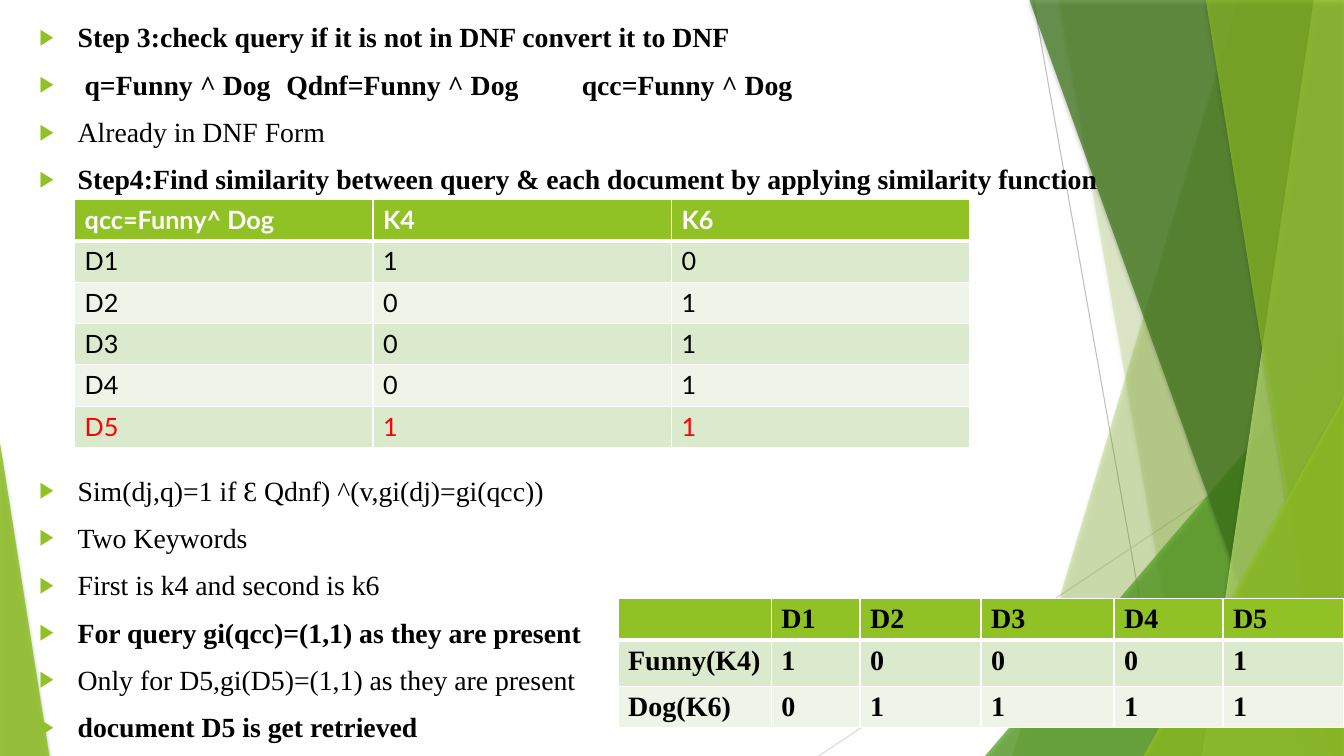
import dataclasses
import typing

import lxml.etree
import pptx
import pptx.dml.color
import pptx.enum.shapes
import pptx.enum.text
import pptx.oxml.ns
import pptx.util

RGB = pptx.dml.color.RGBColor
Pt = pptx.util.Pt
qn = pptx.oxml.ns.qn

EMU_PER_PX = 9144  # 100 px to the inch
SLIDE_W, SLIDE_H = 1333, 750

LIME = RGB(0x90, 0xC2, 0x26)
GREEN = RGB(0x54, 0xA0, 0x21)
DARK_GREEN = RGB(0x3F, 0x78, 0x19)
PALE_LIME = RGB(0xC0, 0xE4, 0x74)
BAND_DARK = RGB(0xDB, 0xE9, 0xCC)
BAND_LIGHT = RGB(0xEE, 0xF4, 0xE7)
GREY = RGB(0xBF, 0xBF, 0xBF)
LIGHT_GREY = RGB(0xD9, 0xD9, 0xD9)
BLACK = RGB(0, 0, 0)
WHITE = RGB(0xFF, 0xFF, 0xFF)
RED = RGB(0xFF, 0, 0)

SERIF = "Times New Roman"
SANS = "Lato"


@dataclasses.dataclass
class Ray:
    start: tuple[int, int]
    end: tuple[int, int]
    color: RGB


@dataclasses.dataclass
class Facet:
    points: list[tuple[int, int]]
    color: RGB
    opacity: int


@dataclasses.dataclass
class Corner:
    box: tuple[int, int, int, int]
    apex: float
    color: RGB
    opacity: int


@dataclasses.dataclass
class Bullet:
    text: str
    bold: bool = False
    before: float = 10
    tabs: tuple[int, ...] = ()


@dataclasses.dataclass
class Grid:
    left: int
    top: int
    cols: list[int]
    rows: list[int]
    cells: list[list[str]]
    font: str
    size: int
    header_color: RGB
    bold_body: bool = False
    marked_row: typing.Optional[int] = None


def right_facet(top_x: int, bottom_x: int, color: RGB, opacity: int) -> Facet:
    """Facet reaching from a slanted left side to the slide's right edge."""
    points = [(top_x, 0), (SLIDE_W, 0), (SLIDE_W, SLIDE_H), (bottom_x, SLIDE_H)]
    return Facet(points, color, opacity)


DECOR = [
    Ray((1025, 0), (1158, 750), GREY),
    Ray((1333, 403), (812, 750), LIGHT_GREY),
    right_facet(1228, 1004, LIME, 30),
    right_facet(1050, 1182, LIME, 20),
    Corner((977, 333, 356, 417), 1, GREEN, 72),
    right_facet(1021, 1291, DARK_GREEN, 70),
    right_facet(1303, 1192, PALE_LIME, 70),
    right_facet(1196, 1317, LIME, 65),
    Corner((1134, 393, 199, 357), 1, LIME, 80),
    Corner((0, 439, 49, 311), 0, LIME, 85),
]

BULLETS = [
    Bullet("Step 3:check query if it is not in DNF convert it to DNF", True, 0),
    Bullet(" q=Funny ^ Dog\tQdnf=Funny ^ Dog\tqcc=Funny ^ Dog", True, tabs=(245, 538)),
    Bullet("Already in DNF Form"),
    Bullet("Step4:Find similarity between query & each document by applying "
           "similarity function", True),
    Bullet("Sim(dj,q)=1 if Ɛ Qdnf) ^(v,gi(dj)=gi(qcc))", before=198.4),
    Bullet("Two Keywords"),
    Bullet("First is k4 and second is k6"),
    Bullet("For query gi(qcc)=(1,1) as they are present", True),
    Bullet("Only for D5,gi(D5)=(1,1) as they are present"),
    Bullet("document D5 is get retrieved", True),
]

GRIDS = [
    Grid(74, 198, [296] * 3, [41] * 6,
         [["qcc=Funny^ Dog", "K4", "K6"], ["D1", "1", "0"], ["D2", "0", "1"],
          ["D3", "0", "1"], ["D4", "0", "1"], ["D5", "1", "1"]],
         SANS, 18, WHITE, marked_row=5),
    Grid(613, 594, [152, 88, 120, 132, 108, 120], [41, 46, 41],
         [["", "D1", "D2", "D3", "D4", "D5"],
          ["Funny(K4)", "1", "0", "0", "0", "1"],
          ["Dog(K6)", "0", "1", "1", "1", "1"]],
         SERIF, 20, BLACK, bold_body=True),
]


def px(n: int) -> pptx.util.Emu:
    return pptx.util.Emu(n * EMU_PER_PX)


def add_xml(parent, tag: str, **attrs):
    return lxml.etree.SubElement(parent, qn(tag), {k: str(v) for k, v in attrs.items()})


def draw_ray(s, ray: Ray) -> None:
    line = s.shapes.add_connector(pptx.enum.shapes.MSO_CONNECTOR.STRAIGHT,
                                  *map(px, ray.start + ray.end))
    line.line.color.rgb = ray.color
    line.line.width = Pt(0.75)
    add_xml(line.element.spPr, "a:effectLst")


def draw_glass(s, item: typing.Union[Facet, Corner]) -> None:
    """Draw a translucent facet or corner triangle with a soft shadow."""
    if isinstance(item, Facet):
        builder = s.shapes.build_freeform(*item.points[0], scale=float(EMU_PER_PX))
        builder.add_line_segments(item.points[1:], close=True)
        sp = builder.convert_to_shape()
    else:
        sp = s.shapes.add_shape(pptx.enum.shapes.MSO_SHAPE.ISOSCELES_TRIANGLE,
                                *map(px, item.box))
        sp.adjustments[0] = item.apex
    sp.fill.solid()
    sp.fill.fore_color.rgb = item.color
    sp.line.fill.background()
    sp.shadow.inherit = False
    props = sp.element.spPr
    color = props.find(qn("a:solidFill")).find(qn("a:srgbClr"))
    add_xml(color, "a:alpha", val=item.opacity * 1000)
    shadow = add_xml(props.find(qn("a:effectLst")), "a:outerShdw", blurRad=Pt(3),
                     dist=Pt(2), dir=5400000, rotWithShape=0)
    add_xml(add_xml(shadow, "a:srgbClr", val=BLACK), "a:alpha", val=35000)


def write_bullet(p, bullet: Bullet) -> None:
    props = p._p.get_or_add_pPr()
    props.set("marL", str(px(38)))
    props.set("indent", str(-px(38)))
    add_xml(add_xml(props, "a:buClr"), "a:srgbClr", val=LIME)
    add_xml(props, "a:buSzPct", val=80000)
    add_xml(props, "a:buFont", typeface="Arial")
    add_xml(props, "a:buChar", char="▶")
    if bullet.tabs:
        stops = add_xml(props, "a:tabLst")
        for pos in bullet.tabs:
            add_xml(stops, "a:tab", pos=px(pos), algn="l")
    p.space_before = Pt(bullet.before)
    p.line_spacing = Pt(23.8)
    write_run(p, bullet.text, SERIF, 19.8, BLACK, bullet.bold)


def write_run(p, text: str, font: str, size: float, color: RGB, bold: bool) -> None:
    r = p.add_run()
    r.text = text
    r.font.name = font
    r.font.size = Pt(size)
    r.font.color.rgb = color
    r.font.bold = bold


def set_borders(cell, top: float, bottom: float) -> None:
    widths = {"a:lnL": 0.96, "a:lnR": 0.96, "a:lnT": top, "a:lnB": bottom}
    props = cell._tc.get_or_add_tcPr()
    for i, (tag, width) in enumerate(widths.items()):
        ln = add_xml(props, tag, w=Pt(width))
        add_xml(add_xml(ln, "a:solidFill"), "a:srgbClr", val=WHITE)
        props.insert(i, ln)


def draw_grid(s, grid: Grid) -> None:
    table = s.shapes.add_table(len(grid.rows), len(grid.cols), px(grid.left), px(grid.top),
                               px(sum(grid.cols)), px(sum(grid.rows))).table
    table.horz_banding = False
    for col, width in zip(table.columns, grid.cols):
        col.width = px(width)
    for i, (row, height) in enumerate(zip(table.rows, grid.rows)):
        row.height = px(height)
        header = i == 0
        band = LIME if header else BAND_DARK if i % 2 else BAND_LIGHT
        color = grid.header_color if header else RED if i == grid.marked_row else BLACK
        for cell, text in zip(row.cells, grid.cells[i]):
            cell.fill.solid()
            cell.fill.fore_color.rgb = band
            set_borders(cell, 3 if i == 1 else 0.96, 3 if header else 0.96)
            if text:
                write_run(cell.text_frame.paragraphs[0], text, grid.font, grid.size,
                          color, header or grid.bold_body)


def main() -> None:
    prs = pptx.Presentation()
    prs.slide_width, prs.slide_height = px(SLIDE_W), px(SLIDE_H)
    s = prs.slides.add_slide(prs.slide_layouts[1])
    title = s.shapes.title.element
    title.getparent().remove(title)
    body = s.placeholders[1]

    for item in DECOR:
        if isinstance(item, Ray):
            draw_ray(s, item)
        else:
            draw_glass(s, item)

    s.shapes.element.append(body.element)  # bring the list above the facets
    body.left, body.top, body.width, body.height = map(px, (29, 15, 1256, 726))
    tf = body.text_frame
    tf.word_wrap = True
    tf.auto_size = pptx.enum.text.MSO_AUTO_SIZE.NONE
    tf.vertical_anchor = pptx.enum.text.MSO_ANCHOR.TOP
    for i, bullet in enumerate(BULLETS):
        write_bullet(tf.add_paragraph() if i else tf.paragraphs[0], bullet)

    for grid in GRIDS:
        draw_grid(s, grid)
    prs.save("out.pptx")


if __name__ == "__main__":
    main()
